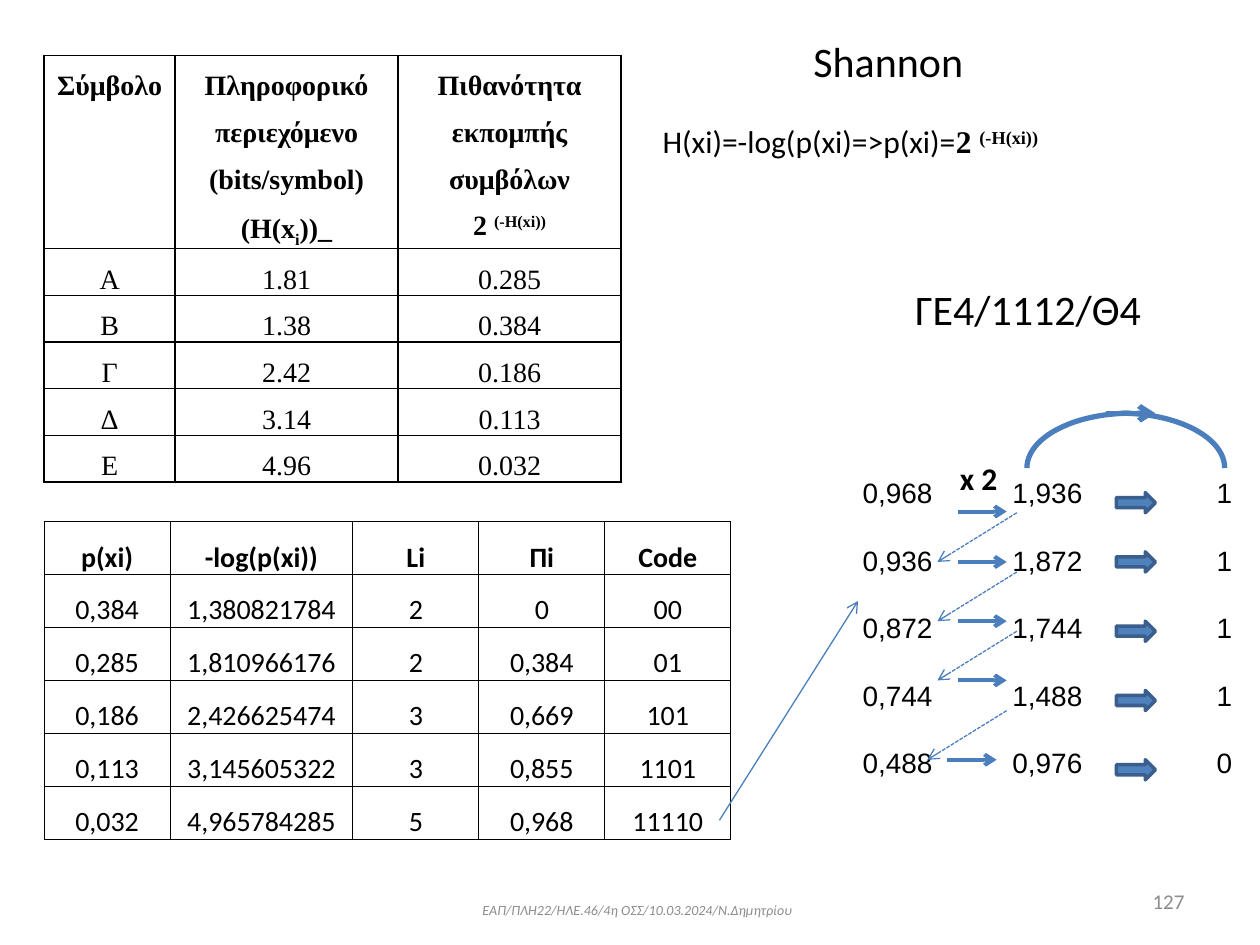
from dataclasses import dataclass
from typing import Any, NamedTuple, Optional

from lxml.etree import SubElement
from pptx import Presentation
from pptx.dml.color import RGBColor
from pptx.enum.dml import MSO_LINE
from pptx.enum.shapes import MSO_CONNECTOR, MSO_SHAPE
from pptx.enum.text import MSO_ANCHOR, MSO_AUTO_SIZE, PP_ALIGN
from pptx.oxml.ns import qn
from pptx.util import Inches, Pt

BLACK = RGBColor(0x00, 0x00, 0x00)
GREY = RGBColor(0x8C, 0x8C, 0x8C)
LINE_BLUE = RGBColor(0x4B, 0x7E, 0xBC)
FILL_BLUE = RGBColor(0x4F, 0x81, 0xBD)
EDGE_BLUE = RGBColor(0x3A, 0x5F, 0x8C)

SLIDE_WIDTH = Inches(10)
SLIDE_HEIGHT = Inches(7.5)
GRID_COLUMNS = 100


def grid(count: float) -> int:
    return round(SLIDE_WIDTH * count / GRID_COLUMNS)


class Area(NamedTuple):
    column: float
    row: float
    columns: float
    rows: float

    def lengths(self) -> list[int]:
        return [grid(count) for count in self]


class Span(NamedTuple):
    text: str
    format: dict[str, Any] = {}
    baseline: int = 0


Paragraph = list[Span]


@dataclass
class Label:
    area: Area
    spans: Paragraph
    format: dict[str, Any]
    align: PP_ALIGN = PP_ALIGN.LEFT
    anchor: MSO_ANCHOR = MSO_ANCHOR.MIDDLE
    wraps: bool = True


@dataclass
class TableBlock:
    column: float
    row: float
    widths: list[float]
    heights: list[float]
    cells: list[list[Any]]
    format: dict[str, Any]
    align: PP_ALIGN = PP_ALIGN.CENTER
    anchor: MSO_ANCHOR = MSO_ANCHOR.BOTTOM
    margins: tuple[float, float] = (0.1, 0.1)
    spacing: Optional[float] = None
    border: float = 0
    bold_header: bool = True


def set_attributes(target: Any, values: dict[str, Any]) -> None:
    for name, value in values.items():
        if name == "color":
            target.color.rgb = value
        else:
            setattr(target, name, value)


def fill_paragraph(para: Any, spans: Paragraph, base: dict[str, Any], align: PP_ALIGN) -> None:
    para.alignment = align
    for part in spans:
        span = para.add_run()
        span.text = part.text
        set_attributes(span.font, base | part.format)
        if part.baseline:
            span._r.get_or_add_rPr().set("baseline", str(part.baseline * 1000))


def draw_label(page: Any, label: Label) -> None:
    box = page.shapes.add_textbox(*label.area.lengths())
    set_attributes(box.text_frame, {
        "word_wrap": label.wraps,
        "vertical_anchor": label.anchor,
        "auto_size": MSO_AUTO_SIZE.NONE if label.wraps else MSO_AUTO_SIZE.SHAPE_TO_FIT_TEXT,
    })
    fill_paragraph(box.text_frame.paragraphs[0], label.spans, label.format, label.align)


def draw_borders(cell: Any, points: float) -> None:
    properties = cell._tc.get_or_add_tcPr()
    for side in ("lnL", "lnR", "lnT", "lnB"):
        edge = SubElement(properties, qn(f"a:{side}"), w=str(Pt(points)))
        if points:
            paint = SubElement(edge, qn("a:solidFill"))
            SubElement(paint, qn("a:srgbClr"), val=str(BLACK))
        else:
            SubElement(edge, qn("a:noFill"))


def draw_table(page: Any, block: TableBlock) -> None:
    area = Area(block.column, block.row, sum(block.widths), sum(block.heights))
    table = page.shapes.add_table(len(block.heights), len(block.widths), *area.lengths()).table
    set_attributes(table, {"first_row": False, "horz_banding": False})
    for column, width in zip(table.columns, block.widths):
        column.width = grid(width)
    for row, height in zip(table.rows, block.heights):
        row.height = grid(height)
    side, top = map(grid, block.margins)
    for row_index, values in enumerate(block.cells):
        style = block.format | {"bold": block.bold_header and row_index == 0}
        for column_index, value in enumerate(values):
            cell = table.cell(row_index, column_index)
            set_attributes(cell, {"margin_left": side, "margin_right": side, "margin_top": top,
                                  "margin_bottom": 0, "vertical_anchor": block.anchor})
            draw_borders(cell, block.border)
            cell.fill.background()
            paragraphs = [[Span(value)]] if isinstance(value, str) else value
            for index, spans in enumerate(paragraphs):
                frame = cell.text_frame
                para = frame.add_paragraph() if index else frame.paragraphs[0]
                para.line_spacing = block.spacing
                fill_paragraph(para, spans, style, block.align)


def draw_arrow(page: Any, start: tuple[float, float], end: tuple[float, float],
               points: float, dashed: bool = False) -> None:
    arrow = page.shapes.add_connector(MSO_CONNECTOR.STRAIGHT, *map(grid, start + end))
    arrow.line.color.rgb = LINE_BLUE
    arrow.line.width = Pt(points)
    if dashed:
        arrow.line.dash_style = MSO_LINE.SQUARE_DOT
    SubElement(arrow.line._get_or_add_ln(), qn("a:tailEnd"), type="arrow")
    SubElement(arrow._element.spPr, qn("a:effectLst"))


def draw_block_arrow(page: Any, area: Area) -> None:
    arrow = page.shapes.add_shape(MSO_SHAPE.RIGHT_ARROW, *area.lengths())
    arrow.shadow.inherit = False
    arrow.fill.solid()
    arrow.fill.fore_color.rgb = FILL_BLUE
    arrow.line.color.rgb = EDGE_BLUE
    arrow.line.width = Pt(2)


def draw_arc(page: Any, area: Area, flipped: bool) -> None:
    arc = page.shapes.add_shape(MSO_SHAPE.ARC, *area.lengths())
    arc.shadow.inherit = False
    arc.fill.background()
    arc.line.color.rgb = LINE_BLUE
    arc.line.width = Pt(3)
    if flipped:
        arc._element.spPr.find(qn("a:xfrm")).set("flipH", "1")


def font(name: str, size: float, color: RGBColor = BLACK, **extra: Any) -> dict[str, Any]:
    return {"name": name, "size": Pt(size), "color": color} | extra


SERIF_BOLD = {"name": "Times New Roman", "bold": True}
POWER = [Span("2 ", SERIF_BOLD), Span("(-H(xi))", SERIF_BOLD, 30)]
INFORMATION = [Span("Πληροφορικό περιεχόμενο (bits/symbol) (H(x"), Span("i", {}, -25), Span("))_")]

TABLES = [
    TableBlock(42.1, 35.1, [32, 11.9, 11.9], [5.36] * 5, [
        ["0,968", "1,936", "1"], ["0,936", "1,872", "1"], ["0,872", "1,744", "1"],
        ["0,744", "1,488", "1"], ["0,488", "0,976", "0"],
    ], font("Arial", 16), align=PP_ALIGN.RIGHT, bold_header=False),
    TableBlock(3.5, 4.4, [10.4, 17.7, 17.7], [15.3] + [3.7] * 5, [
        ["Σύμβολο", [INFORMATION], [[Span("Πιθανότητα εκπομπής συμβόλων")], POWER]],
        ["A", "1.81", "0.285"], ["B", "1.38", "0.384"], ["Γ", "2.42", "0.186"],
        ["Δ", "3.14", "0.113"], ["Ε", "4.96", "0.032"],
    ], font("Times New Roman", 16), anchor=MSO_ANCHOR.TOP, margins=(0.7, 0), spacing=1.5, border=1),
    TableBlock(3.5, 41.4, [10, 14.5, 10, 10, 10], [4.2] * 6, [
        ["p(xi)", "-log(p(xi))", "Li", "Πi", "Code"],
        ["0,384", "1,380821784", "2", "0", "00"],
        ["0,285", "1,810966176", "2", "0,384", "01"],
        ["0,186", "2,426625474", "3", "0,669", "101"],
        ["0,113", "3,145605322", "3", "0,855", "1101"],
        ["0,032", "4,965784285", "5", "0,968", "11110"],
    ], font("Calibri", 16), border=0.5),
]

LABELS = [
    Label(Area(26.4, 69.5, 48.4, 5.5), [Span("ΕΑΠ/ΠΛΗ22/ΗΛΕ.46/4η ΟΣΣ/10.03.2024/Ν.Δημητρίου")],
          font("Calibri", 8, GREY, italic=True), PP_ALIGN.CENTER),
    Label(Area(71.7, 69.5, 23.3, 4), [Span("127")], font("Calibri", 12, GREY), PP_ALIGN.RIGHT),
    Label(Area(51.6, 9.2, 32.9, 7.1), [Span("H(xi)=-log(p(xi)=>p(xi)="), *POWER],
          font("Calibri", 18), anchor=MSO_ANCHOR.TOP, wraps=False),
    Label(Area(59.4, 2.1, 22.2, 5.4), [Span("Shannon")], font("Calibri", 24), PP_ALIGN.CENTER),
    Label(Area(70.5, 21.8, 22.2, 5.4), [Span("ΓΕ4/1112/Θ4")], font("Calibri", 24), PP_ALIGN.CENTER),
    Label(Area(75.2, 35.9, 5, 4), [Span("x 2")], font("Calibri", 18, bold=True),
          anchor=MSO_ANCHOR.TOP, wraps=False),
]

DOUBLING_STEPS = [(76, 40.6), (76, 44.6), (76, 49.3), (76, 54), (75.2, 60.3)]
BIT_ROWS = [39.1, 43.8, 49.3, 54.8, 60.3]
STEP_LENGTH = 3.9


def main() -> None:
    deck = Presentation()
    deck.slide_width, deck.slide_height = SLIDE_WIDTH, SLIDE_HEIGHT
    page = deck.slides.add_slide(deck.slide_layouts[6])
    for block in TABLES:
        draw_table(page, block)
    for label in LABELS:
        draw_label(page, label)
    draw_arrow(page, (57.1, 65.1), (68.1, 47.7), 0.75)
    for index, (column, row) in enumerate(DOUBLING_STEPS):
        draw_arrow(page, (column, row), (column + STEP_LENGTH, row), 2.25)
        if index:
            draw_arrow(page, (column + 4.7, row - STEP_LENGTH), (column - 1.6, row), 0.75, True)
    for row in BIT_ROWS:
        draw_block_arrow(page, Area(88.6, row, 3.1, 1.6))
    for column, flipped in ((80.7, False), (81.5, True)):
        draw_arc(page, Area(column, 32.8, 16.5, 8.7), flipped)
    draw_arrow(page, (87.8, 32.8), (87.8 + STEP_LENGTH, 32.8), 3)
    deck.save("out.pptx")


if __name__ == "__main__":
    main()
